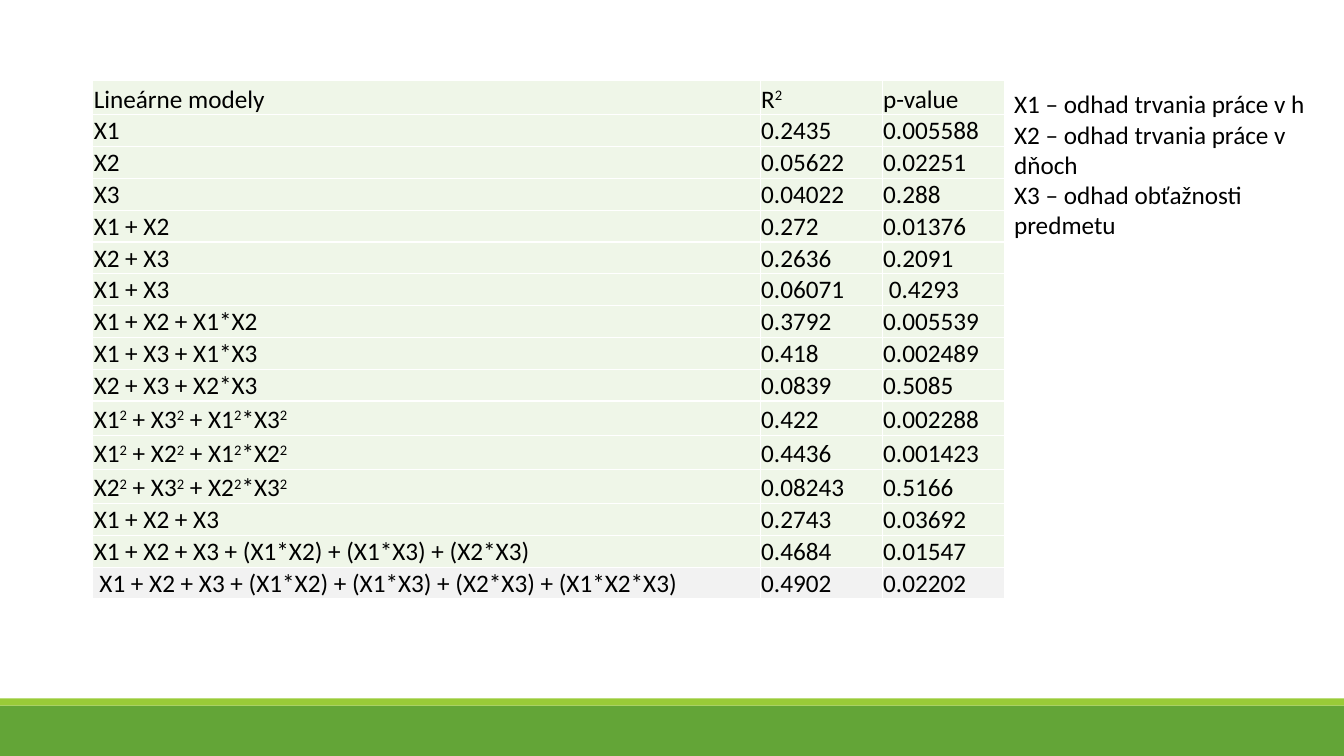
"""Build the slide that compares linear models by R² and p-value."""
from itertools import groupby

from lxml.etree import SubElement
from pptx import Presentation
from pptx.dml.color import RGBColor
from pptx.enum.shapes import MSO_SHAPE
from pptx.enum.text import MSO_ANCHOR
from pptx.oxml.ns import qn
from pptx.util import Inches, Pt

BLACK = RGBColor(0x00, 0x00, 0x00)
WHITE = RGBColor(0xFF, 0xFF, 0xFF)
GREEN = RGBColor(0x63, 0xA5, 0x37)
LIME = RGBColor(0x99, 0xCB, 0x38)
PALE_GREEN = RGBColor(0xEF, 0xF6, 0xE8)
PALE_GREY = RGBColor(0xF2, 0xF2, 0xF2)

SQUARE = "²"
MODELS = [
    ("Lineárne modely", "R²", "p-value"),
    ("X1", "0.2435", "0.005588"),
    ("X2", "0.05622", "0.02251"),
    ("X3", "0.04022", "0.288"),
    ("X1 + X2", "0.272", "0.01376"),
    ("X2 + X3", "0.2636", "0.2091"),
    ("X1 + X3", "0.06071", " 0.4293"),
    ("X1 + X2 + X1*X2", "0.3792", "0.005539"),
    ("X1 + X3 + X1*X3", "0.418", "0.002489"),
    ("X2 + X3 + X2*X3", "0.0839", "0.5085"),
    ("X1² + X3² + X1²*X3²", "0.422", "0.002288"),
    ("X1² + X2² + X1²*X2²", "0.4436", "0.001423"),
    ("X2² + X3² + X2²*X3²", "0.08243", "0.5166"),
    ("X1 + X2 + X3", "0.2743", "0.03692"),
    ("X1 + X2 + X3 + (X1*X2) + (X1*X3) + (X2*X3)", "0.4684", "0.01547"),
    (" X1 + X2 + X3 + (X1*X2) + (X1*X3) + (X2*X3) + (X1*X2*X3)", "0.4902", "0.02202"),
]
COLUMN_WIDTHS = [6.62, 1.21, 1.21]
LEGEND = [
    "X1 – odhad trvania práce v h",
    "X2 – odhad trvania práce v dňoch",
    "X3 – odhad obťažnosti predmetu",
]


class SlideBuilder:
    """Hold the text style and the current slide."""

    def __init__(self, slide, font_name="Calibri", font_size=18):
        """Keep the slide and the style of its text."""
        self.slide = slide
        self.font_name = font_name
        self.font_size = Pt(font_size)

    def style(self, font):
        """Apply the common text style to a font."""
        font.name = self.font_name
        font.size = self.font_size
        font.color.rgb = BLACK

    def band(self, top, height, color):
        """Draw a plain band over the full slide width."""
        shape = self.slide.shapes.add_shape(
            MSO_SHAPE.RECTANGLE, 0, Inches(top), Inches(13.33), Inches(height))
        shape.shadow.inherit = False
        shape.fill.solid()
        shape.fill.fore_color.rgb = color
        shape.line.fill.background()

    def text(self, left, top, width, height, lines):
        """Write one paragraph for each line in a wrapping text box."""
        shape = self.slide.shapes.add_textbox(
            Inches(left), Inches(top), Inches(width), Inches(height))
        shape.text_frame.word_wrap = True
        shape.text_frame.text = "\n".join(lines)
        for paragraph in shape.text_frame.paragraphs:
            for run in paragraph.runs:
                self.style(run.font)

    def formula(self, paragraph, content):
        """Write a formula whose squares are raised digits."""
        for raised, characters in groupby(content, lambda character: character == SQUARE):
            run = paragraph.add_run()
            run.text = "2" if raised else "".join(characters)
            self.style(run.font)
            if raised:
                run._r.get_or_add_rPr().set("baseline", "30000")

    def borders(self, cell):
        """Give a cell thin borders on its four sides."""
        properties = cell._tc.get_or_add_tcPr()
        for side in ("a:lnL", "a:lnR", "a:lnT", "a:lnB"):
            line = SubElement(properties, qn(side), w=str(Pt(1)))
            fill = SubElement(line, qn("a:solidFill"))
            SubElement(fill, qn("a:srgbClr"), val=str(WHITE))

    def cell(self, cell, content, color):
        """Fill one table cell with its text, borders and colour."""
        cell.margin_left = cell.margin_right = cell.margin_top = Inches(0.01)
        cell.margin_bottom = 0
        cell.vertical_anchor = MSO_ANCHOR.BOTTOM
        self.borders(cell)
        cell.fill.solid()
        cell.fill.fore_color.rgb = color
        self.formula(cell.text_frame.paragraphs[0], content)

    def table(self, left, top, widths, rows):
        """Draw the table of models with its last row in grey."""
        heights = [0.34 if SQUARE in "".join(row) else 0.3 for row in rows]
        table = self.slide.shapes.add_table(
            len(rows), len(widths), Inches(left), Inches(top),
            Inches(sum(widths)), Inches(sum(heights))).table
        for column, width in zip(table.columns, widths):
            column.width = Inches(width)
        for index, (row, height) in enumerate(zip(rows, heights)):
            table.rows[index].height = Inches(height)
            color = PALE_GREY if index == len(rows) - 1 else PALE_GREEN
            for cell, content in zip(table.rows[index].cells, row):
                self.cell(cell, content, color)


def main():
    """Build and save the presentation."""
    presentation = Presentation()
    presentation.slide_width = Inches(13.33)
    presentation.slide_height = Inches(7.5)
    builder = SlideBuilder(presentation.slides.add_slide(presentation.slide_layouts[6]))
    builder.band(7, 0.5, GREEN)
    builder.band(6.93, 0.07, LIME)
    builder.table(0.92, 0.8, COLUMN_WIDTHS, MODELS)
    builder.text(9.96, 0.83, 3.37, 1.62, LEGEND)
    presentation.save("out.pptx")


if __name__ == "__main__":
    main()
